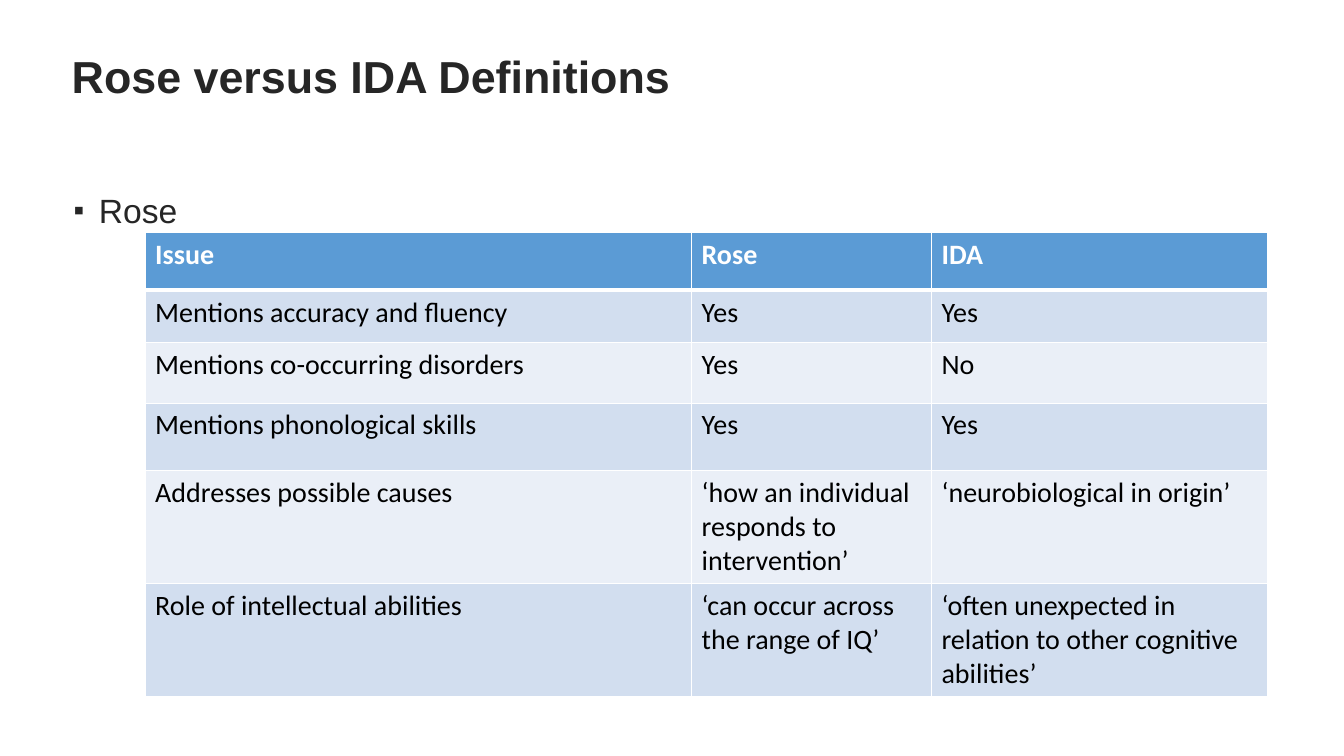
from lxml import etree
from pptx import Presentation
from pptx import util as u
from pptx.dml import color
from pptx.enum import text
from pptx.oxml import ns

HUES = {"ink": "262626", "head": "5B9BD5", "odd": "D2DEEF", "even": "EAEFF7",
        "white": "FFFFFF", "black": "000000"}


def rgb(name):
    return color.RGBColor.from_string(HUES[name])


def add(parent, tag, **attrs):
    return etree.SubElement(parent, ns.qn(tag), attrs)


class Deck:
    """Style and current slide; lengths are percent of the slide's size."""

    def __init__(self):
        self.prs = Presentation()
        self.prs.slide_width, self.prs.slide_height = u.Inches(13.33), u.Inches(7.5)
        self.slide = self.prs.slides.add_slide(self.prs.slide_layouts[1])

    def wide(self, share):
        return round(self.prs.slide_width * share / 100)

    def high(self, share):
        return round(self.prs.slide_height * share / 100)

    def font(self, para, name, size, hue, bold=False):
        for run in para.runs:
            font = run.font
            font.name, font.size, font.bold = name, u.Pt(size), bold
            font.color.rgb = rgb(hue)

    def place(self, shape, box, words):
        x, y, w, h = box
        shape.left, shape.top = self.wide(x), self.high(y)
        shape.width, shape.height = self.wide(w), self.high(h)
        frame = shape.text_frame
        frame.text = words
        frame.word_wrap = True
        frame.auto_size = text.MSO_AUTO_SIZE.NONE
        frame.vertical_anchor = text.MSO_ANCHOR.TOP
        para = frame.paragraphs[0]
        para.alignment = text.PP_ALIGN.LEFT
        para.space_before = u.Pt(0)
        return para

    def title(self, words, box):
        para = self.place(self.slide.shapes.title, box, words)
        para.line_spacing = 0.9
        self.font(para, "Arial", 32, "ink", True)

    def list(self, words, box):
        para = self.place(self.slide.placeholders[1], box, words)
        props = para._p.get_or_add_pPr()
        props.set("marL", str(u.Inches(0.25)))
        props.set("indent", str(-u.Inches(0.25)))
        add(add(props, "a:buClr"), "a:srgbClr", val=HUES["ink"])
        add(props, "a:buSzPct", val="90000")
        add(props, "a:buFont", typeface="Arial")
        add(props, "a:buChar", char="▪")
        para.line_spacing = 1.5
        self.font(para, "Arial", 24, "ink")

    def edge(self, cell, row):
        props = cell._tc.get_or_add_tcPr()
        thick = {0: "a:lnB", 1: "a:lnT"}.get(row)
        for side in ("a:lnL", "a:lnR", "a:lnT", "a:lnB"):
            line = add(props, side, w=str(u.Pt(3 if side == thick else 1)))
            add(add(line, "a:solidFill"), "a:srgbClr", val=HUES["white"])

    def table(self, rows, x, y, cols, highs):
        grid = self.slide.shapes.add_table(
            len(rows), len(cols), self.wide(x), self.high(y),
            self.wide(sum(cols)), self.high(sum(highs))).table
        for col, share in zip(grid.columns, cols):
            col.width = self.wide(share)
        for r, (words, share) in enumerate(zip(rows, highs)):
            grid.rows[r].height = self.high(share)
            fill = "head" if r == 0 else "odd" if r % 2 else "even"
            for c, word in enumerate(words):
                cell = grid.cell(r, c)
                cell.text_frame.text = word
                self.font(cell.text_frame.paragraphs[0], "Calibri", 20,
                          "black" if r else "white", r == 0)
                self.edge(cell, r)
                cell.fill.solid()
                cell.fill.fore_color.rgb = rgb(fill)


def main():
    deck = Deck()

    # Heading and list
    deck.title("Rose versus IDA Definitions", (4.58, 6.53, 72.84, 14))
    deck.list("Rose", (4.73, 21.73, 86.27, 63.47))

    # Comparison of the two definitions
    rows = [
        ("Issue", "Rose", "IDA"),
        ("Mentions accuracy and fluency", "Yes", "Yes"),
        ("Mentions co-occurring disorders", "Yes", "No"),
        ("Mentions phonological skills", "Yes", "Yes"),
        ("Addresses possible causes",
         "‘how an individual responds to intervention’",
         "‘neurobiological in origin’"),
        ("Role of intellectual abilities",
         "‘can occur across the range of IQ’",
         "‘often unexpected in relation to other cognitive abilities’"),
    ]
    deck.table(rows, 10.8, 30.8, (40.66, 17.85, 24.98),
               (7.6, 6.93, 8, 8.93, 14.67, 14.67))

    deck.prs.save("out.pptx")


if __name__ == "__main__":
    main()
